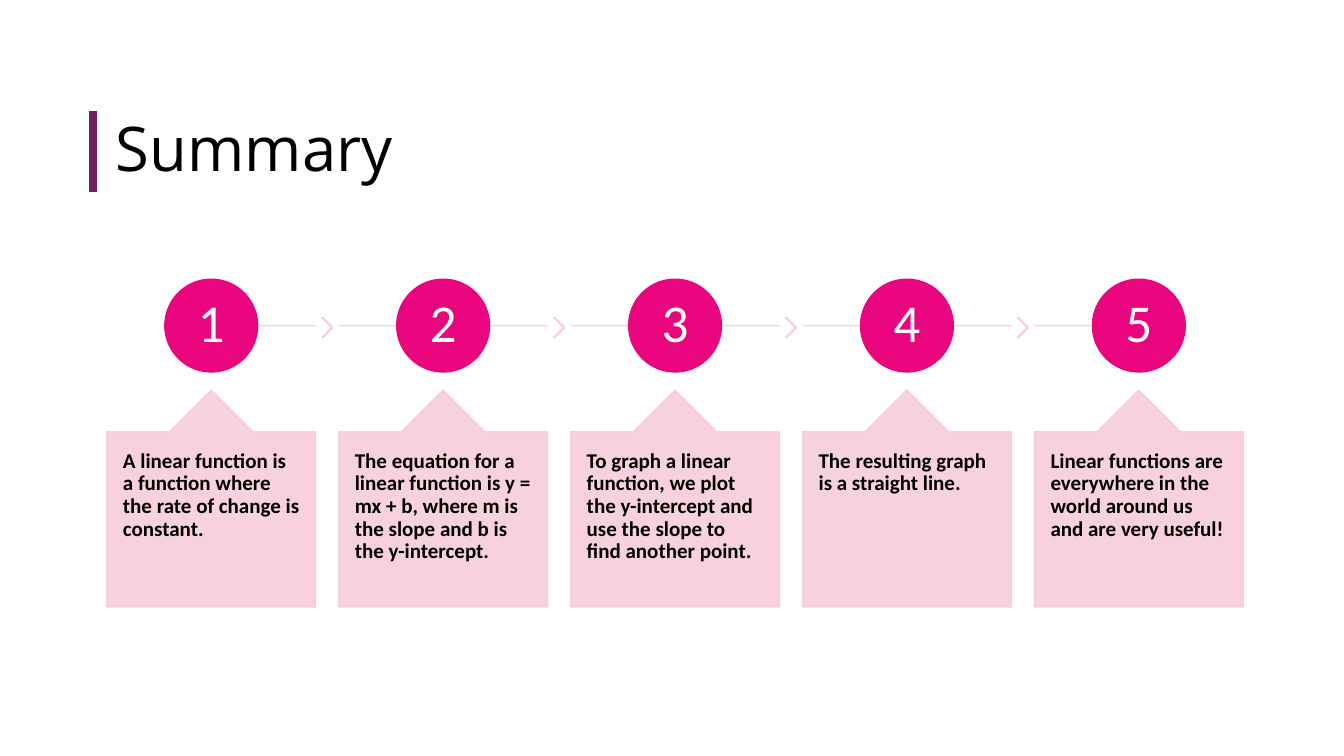
from lxml.etree import SubElement
from pptx import Presentation
from pptx.dml.color import RGBColor
from pptx.enum.shapes import MSO_CONNECTOR, MSO_SHAPE
from pptx.enum.text import MSO_ANCHOR, PP_ALIGN
from pptx.oxml.ns import qn
from pptx.util import Inches, Pt

TITLE = "Summary"
POINTS = [
    "A linear function is a function where the rate of change is constant.",
    "The equation for a linear function is y = mx + b, where m is the slope "
    "and b is the y-intercept.",
    "To graph a linear function, we plot the y-intercept and use the slope to "
    "find another point.",
    "The resulting graph is a straight line.",
    "Linear functions are everywhere in the world around us and are very useful!",
]

BLACK = RGBColor(0x00, 0x00, 0x00)
WHITE = RGBColor(0xFF, 0xFF, 0xFF)
PLUM = RGBColor(0x72, 0x22, 0x62)
PINK = RGBColor(0xE9, 0x05, 0x7E)
BLUSH = RGBColor(0xF7, 0xCC, 0xD8)

# Grid in inches
LEFT, PITCH, CARD_W = 1.06, 2.3, 2.07
CARD_TOP, CARD_H = 3.87, 2.15
CIRCLE, AXIS_Y = 0.92, 3.23
CHEVRON_W, CHEVRON_H, CHEVRON_TOP = 0.11, 0.2, 3.15
TITLE_TOP, TITLE_H, BAR_X = 1.1, 0.8, 0.92

TITLE_FONT = dict(name="Open Sans", size=Pt(44))
NUMBER_FONT = dict(name="Calibri", size=Pt(38))
CARD_FONT = dict(name="Calibri", size=Pt(15), bold=True)


def set_alpha(color_format_parent, percent=90):
    for clr in color_format_parent.iter(qn("a:srgbClr")):
        SubElement(clr, qn("a:alpha"), val=str(percent * 1000))


def add_line(x1, y1, x2, y2, color, width):
    c = s.shapes.add_connector(
        MSO_CONNECTOR.STRAIGHT, *map(Inches, (x1, y1, x2, y2)))
    c.line.color.rgb, c.line.width = color, Pt(width)
    SubElement(c._element.spPr, qn("a:effectLst"))
    return c


def add_filled(kind, x, y, w, h, color, adjustments=()):
    sp = s.shapes.add_shape(kind, *map(Inches, (x, y, w, h)))
    for i, value in enumerate(adjustments):
        sp.adjustments[i] = value
    sp.fill.solid()
    sp.fill.fore_color.rgb = sp.line.color.rgb = color
    sp.line.width = Pt(1)
    sp.shadow.inherit = False
    return sp


def write(sp, text, font, color, align, anchor, inset_x, inset_y):
    tf = sp.text_frame
    tf.text, tf.word_wrap, tf.vertical_anchor = text, True, anchor
    tf.margin_left = tf.margin_right = Inches(inset_x)
    tf.margin_top = tf.margin_bottom = Inches(inset_y)
    p = tf.paragraphs[0]
    p.alignment, p.line_spacing = align, 0.9
    r = p.runs[0]
    for name, value in font.items():
        setattr(r.font, name, value)
    r.font.color.rgb = color


prs = Presentation()
prs.slide_width, prs.slide_height = Inches(13.33), Inches(7.5)
s = prs.slides.add_slide(prs.slide_layouts[5])

add_line(BAR_X, TITLE_TOP, BAR_X, TITLE_TOP + TITLE_H, PLUM, 6)
title = s.shapes.title
title.left, title.top, title.width, title.height = map(
    Inches, (1.05, TITLE_TOP, 11.5, TITLE_H))
write(title, TITLE, TITLE_FONT, BLACK, PP_ALIGN.LEFT, MSO_ANCHOR.MIDDLE, 0.1, 0.05)

for i, point in enumerate(POINTS):
    x = LEFT + i * PITCH
    center = x + CARD_W / 2
    first, last = i == 0, i == len(POINTS) - 1

    track = add_line(center if first else x, AXIS_Y,
                     center if last else x + CARD_W, AXIS_Y, BLUSH, 1)
    set_alpha(track._element.spPr)
    if not last:
        chevron = add_filled(MSO_SHAPE.CHEVRON, x + CARD_W + 0.06, CHEVRON_TOP,
                             CHEVRON_W, CHEVRON_H, BLUSH, [0.9])
        set_alpha(chevron._element.spPr)

    circle = add_filled(MSO_SHAPE.OVAL, center - CIRCLE / 2, AXIS_Y - CIRCLE / 2,
                        CIRCLE, CIRCLE, PINK)
    write(circle, str(i + 1), NUMBER_FONT, WHITE, PP_ALIGN.CENTER,
          MSO_ANCHOR.MIDDLE, 0.04, 0.04)

    card = add_filled(MSO_SHAPE.UP_ARROW_CALLOUT, x, CARD_TOP, CARD_W, CARD_H,
                      BLUSH, [0.5, 0.2, 0.2, 0.81])
    set_alpha(card._element.spPr)
    write(card, point, CARD_FONT, BLACK, PP_ALIGN.LEFT, MSO_ANCHOR.TOP, 0.16, 0.18)

prs.save("out.pptx")
